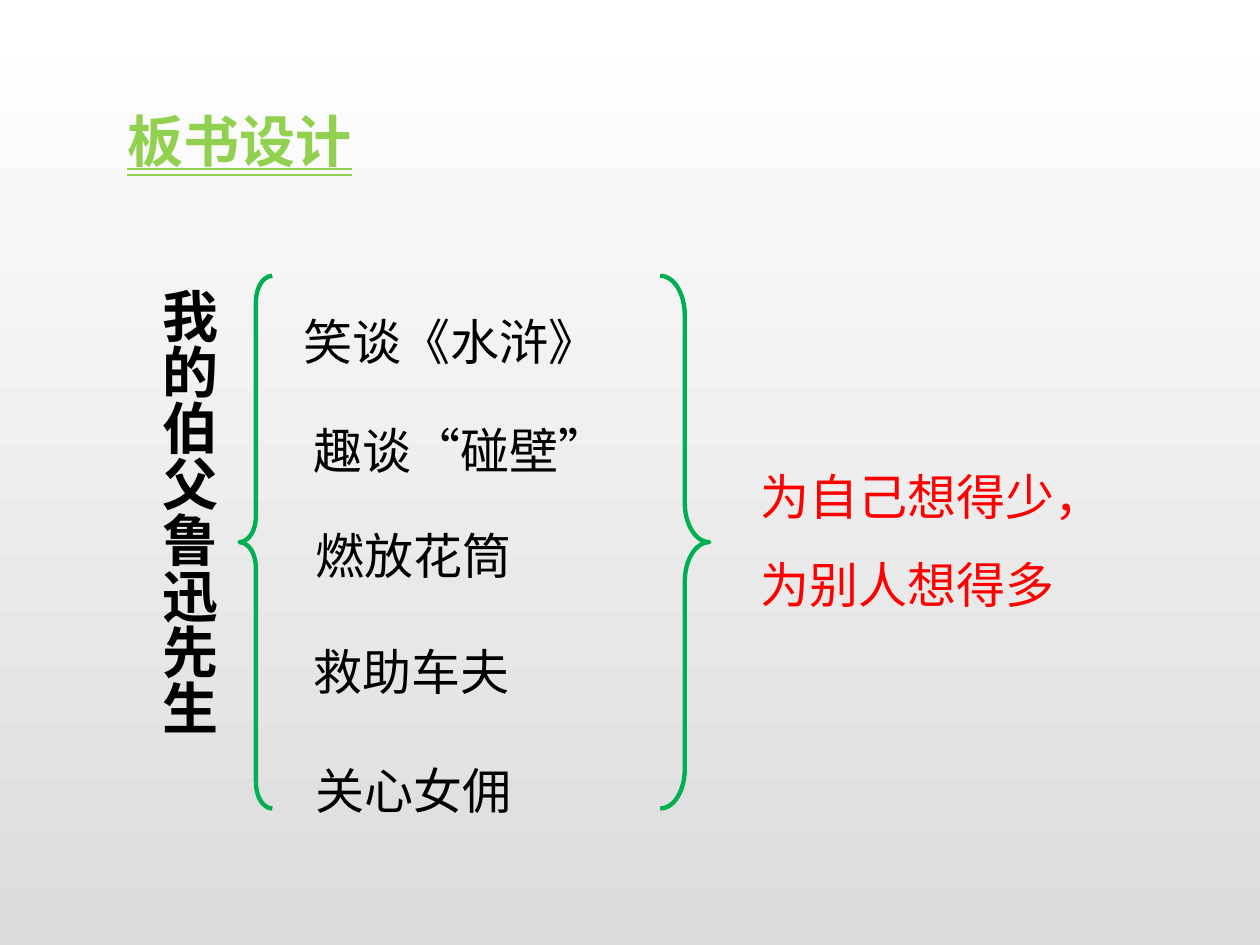
from dataclasses import dataclass

from lxml.etree import SubElement
from pptx import Presentation
from pptx.dml.color import RGBColor
from pptx.enum.lang import MSO_LANGUAGE_ID as Lang
from pptx.enum.shapes import MSO_SHAPE as Shape
from pptx.enum.text import MSO_AUTO_SIZE as AutoSize
from pptx.enum.text import MSO_TEXT_UNDERLINE_TYPE as Underline
from pptx.enum.text import PP_ALIGN as Align
from pptx.oxml.ns import qn
from pptx.slide import Slide
from pptx.util import Cm, Pt

FONT = "Noto Sans CJK SC"
COLORS = {
    "top": "FFFFFF",
    "bottom": "DCDCDC",
    "title": "92D050",
    "brace": "00B050",
    "text": "000000",
    "conclusion": "FF0000",
}
BRACE_TOP, BRACE_HEIGHT = 5.56, 10.74


@dataclass
class Label:
    """A line of text; left, top, width and height are in centimetres."""
    text: str
    left: float
    top: float
    width: float
    height: float = 1.78
    size: int = 28
    color: str = "text"
    bold: bool = False
    spacing: float = 1.5
    wrap: bool = True
    vertical: bool = False
    underline: Underline | None = None
    align: Align | None = None


@dataclass
class Brace:
    kind: Shape
    left: float
    width: float


LABELS = [
    Label("板书设计", 2.29, 2.03, 5.08, 1.63, size=32, color="title", bold=True,
          spacing=1, wrap=False, underline=Underline.DOUBLE_LINE, align=Align.CENTER),
    Label("我的伯父鲁迅先生", 2.72, BRACE_TOP, 1.88, 12.6, size=32, bold=True,
          spacing=1, vertical=True),
    Label("笑谈《水浒》", 5.87, BRACE_TOP, 6.83),
    Label("趣谈“碰壁”", 6.07, 7.75, 8.46),
    Label("燃放花筒", 6.12, 9.88, 8.61),
    Label("救助车夫", 6.07, 12.22, 8.61),
    Label("关心女佣", 6.12, 15.21, 4.5, 1.45, spacing=1, wrap=False),
    Label("为自己想得少，为别人想得多", 15.09, 8.69, 7.37, 3.56, color="conclusion"),
]
BRACES = [Brace(Shape.LEFT_BRACE, 4.83, 0.66), Brace(Shape.RIGHT_BRACE, 13.31, 0.99)]


def rgb(name: str) -> RGBColor:
    return RGBColor.from_string(COLORS[name])


def paint_background(s: Slide) -> None:
    fill = s.background.fill
    fill.gradient()
    fill.gradient_angle = 270
    for stop, name in zip(fill.gradient_stops, ("top", "bottom")):
        stop.color.rgb = rgb(name)


def add_label(s: Slide, label: Label) -> None:
    sp = s.shapes.add_textbox(Cm(label.left), Cm(label.top),
                              Cm(label.width), Cm(label.height))
    tf = sp.text_frame
    tf.word_wrap = label.wrap
    tf.auto_size = AutoSize.SHAPE_TO_FIT_TEXT
    if label.vertical:
        tf._txBody.bodyPr.set("vert", "eaVert")
    p = tf.paragraphs[0]
    p.text = label.text
    p.alignment = label.align
    p.line_spacing = label.spacing
    font = p.font
    font.name = FONT
    font.size = Pt(label.size)
    font.bold = label.bold
    font.underline = label.underline
    font.color.rgb = rgb(label.color)
    font.language_id = Lang.SIMPLIFIED_CHINESE
    SubElement(p._p.pPr.find(qn("a:defRPr")), qn("a:ea"), typeface=FONT)


def add_brace(s: Slide, brace: Brace) -> None:
    sp = s.shapes.add_shape(brace.kind, Cm(brace.left), Cm(BRACE_TOP),
                            Cm(brace.width), Cm(BRACE_HEIGHT))
    sp.adjustments[0] = 0.8
    sp.shadow.inherit = False
    sp.fill.background()
    sp.line.color.rgb = rgb("brace")
    sp.line.width = Pt(2.5)


def main() -> None:
    prs = Presentation()
    prs.slide_width, prs.slide_height = Cm(25.4), Cm(19.05)
    s = prs.slides.add_slide(prs.slide_layouts[6])
    paint_background(s)
    for brace in BRACES:
        add_brace(s, brace)
    for label in LABELS:
        add_label(s, label)
    prs.save("out.pptx")


if __name__ == "__main__":
    main()
